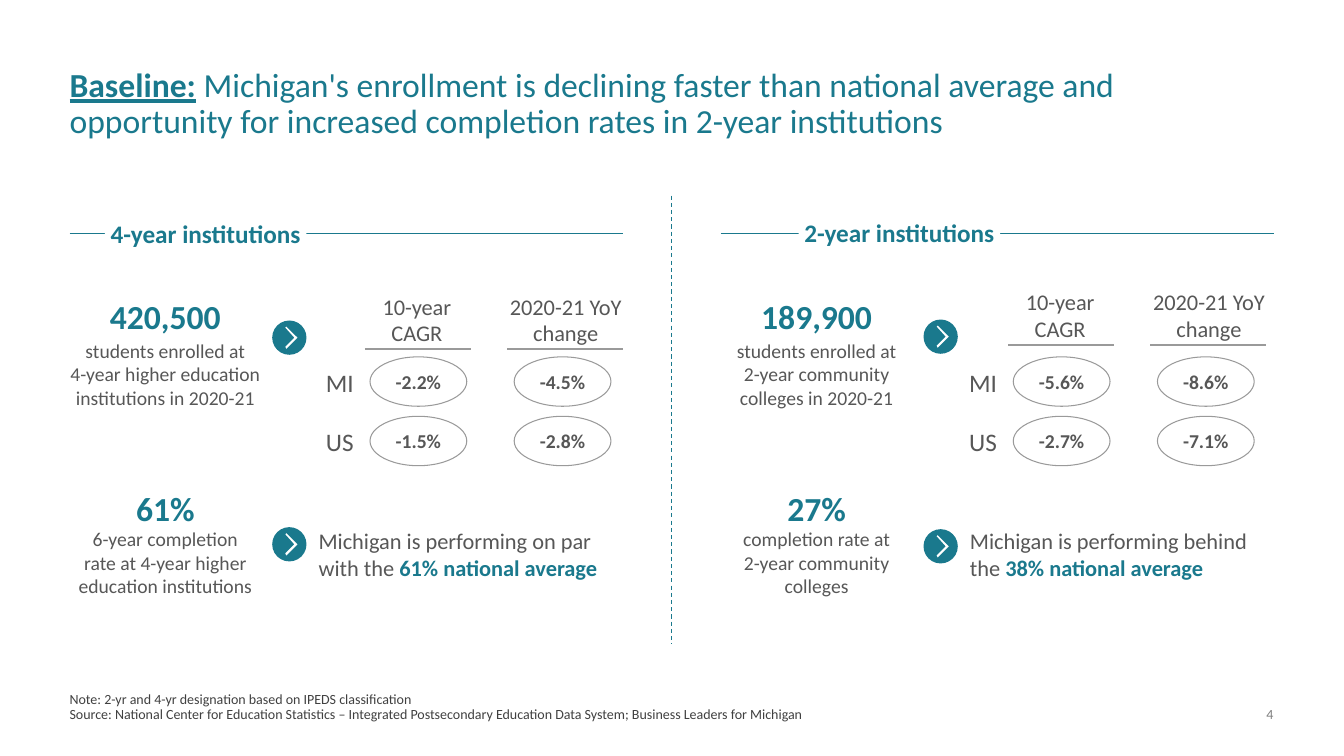
from dataclasses import dataclass

from lxml.etree import SubElement
from pptx import Presentation
from pptx.dml.color import RGBColor
from pptx.enum.dml import MSO_LINE
from pptx.enum.shapes import MSO_CONNECTOR, MSO_SHAPE
from pptx.enum.text import MSO_ANCHOR, MSO_AUTO_SIZE, PP_ALIGN
from pptx.oxml.ns import qn
from pptx.util import Inches, Pt

TEAL = RGBColor(0x1A, 0x79, 0x8D)
TEXT_GREY = RGBColor(0x57, 0x57, 0x57)
LINE_GREY = RGBColor(0x9A, 0x9A, 0x9A)
NOTE_GREY = RGBColor(0x40, 0x40, 0x40)
PAGE_GREY = RGBColor(0x80, 0x80, 0x80)
WHITE = RGBColor(0xFF, 0xFF, 0xFF)

FONT = "Calibri"
STAT_WIDTH = 1.9
ARROW_SIZE = 0.34
CHEVRON = [(0.14, 0.06), (0.25, 0.17), (0.14, 0.28),
           (0.13, 0.26), (0.22, 0.17), (0.13, 0.07)]
COLUMN_STEP = 1.43
ROW_STEP = 0.59


@dataclass
class Institutions:
    heading: str
    heading_offset: float
    heading_top: float
    enrolled: str
    enrolled_caption: str
    rates: dict
    rates_offset: float
    rates_top: float
    completion: str
    completion_caption: str
    verdict: str
    benchmark: str
    arrow_tops: tuple


FOUR_YEAR = Institutions(
    "4-year institutions", 0.35, 2.17,
    "420,500", "students enrolled at\n4-year higher education institutions in 2020-21",
    {"MI": ("-2.2%", "-4.5%"), "US": ("-1.5%", "-2.8%")}, 2.4, 2.9,
    "61%", "6-year completion\nrate at 4-year higher education institutions",
    "Michigan is performing on par with the ", "61% national average", (3.18, 5.23))
TWO_YEAR = Institutions(
    "2-year institutions", 0.77, 2.16,
    "189,900", "students enrolled at\n2-year community colleges in 2020-21",
    {"MI": ("-5.6%", "-8.6%"), "US": ("-2.7%", "-7.1%")}, 2.32, 2.86,
    "27%", "completion rate at\n2-year community colleges",
    "Michigan is performing behind the ", "38% national average", (3.17, 5.25))


def add_run(paragraph, text, size, color, bold=False, underline=False):
    run = paragraph.add_run()
    run.text = text
    font = run.font
    font.name, font.size, font.bold, font.underline = FONT, Pt(size), bold, underline
    font.color.rgb = color


def set_frame(frame, anchor, inset=0.0):
    frame.word_wrap = True
    frame.auto_size = MSO_AUTO_SIZE.NONE
    frame.vertical_anchor = anchor
    frame.margin_left = frame.margin_right = Inches(inset)
    frame.margin_top = frame.margin_bottom = Inches(inset / 2)


def write(frame, text, size, color, bold=False, align=PP_ALIGN.CENTER,
          anchor=MSO_ANCHOR.MIDDLE, inset=0.0):
    """Fill a frame with one paragraph, breaking the line at each newline."""
    set_frame(frame, anchor, inset)
    paragraph = frame.paragraphs[0]
    paragraph.alignment = align
    for number, line in enumerate(text.split("\n")):
        if number:
            paragraph.add_line_break()
        add_run(paragraph, line, size, color, bold)
    return paragraph


def add_text(slide, box, *args, **kwargs):
    textbox = slide.shapes.add_textbox(*map(Inches, box))
    return write(textbox.text_frame, *args, **kwargs)


def add_line(slide, start, end, color, width=0.75):
    line = slide.shapes.add_connector(
        MSO_CONNECTOR.STRAIGHT, *map(Inches, (*start, *end)))
    line.line.color.rgb = color
    line.line.width = Pt(width)
    SubElement(line._element.spPr, qn("a:effectLst"))
    return line


def add_filled(shapes, kind, box, color):
    shape = shapes.add_shape(kind, *map(Inches, box))
    shape.shadow.inherit = False
    shape.fill.solid()
    shape.fill.fore_color.rgb = color
    shape.line.fill.background()
    return shape


def add_arrow(slide, left, top):
    """Teal disc with a white chevron."""
    shapes = slide.shapes.add_group_shape().shapes
    add_filled(shapes, MSO_SHAPE.OVAL, (left, top, ARROW_SIZE, ARROW_SIZE), TEAL)
    points = [(Inches(left + x), Inches(top + y)) for x, y in CHEVRON]
    builder = shapes.build_freeform(*points[0])
    builder.add_line_segments(points[1:])
    chevron = builder.convert_to_shape()
    chevron.shadow.inherit = False
    chevron.fill.solid()
    chevron.fill.fore_color.rgb = WHITE
    chevron.line.fill.background()


def add_stat(slide, left, top, number, caption, caption_top):
    add_text(slide, (left, top, STAT_WIDTH, 0.5), number, 24, TEAL, bold=True)
    add_text(slide, (left, caption_top, STAT_WIDTH, 0.81), caption, 14, TEXT_GREY,
             anchor=MSO_ANCHOR.TOP)


def add_rate(slide, left, top, rate):
    oval = slide.shapes.add_shape(
        MSO_SHAPE.OVAL, *map(Inches, (left, top, 0.96, 0.49)))
    oval.shadow.inherit = False
    oval.fill.background()
    oval.line.color.rgb = LINE_GREY
    oval.line.width = Pt(0.75)
    write(oval.text_frame, rate, 14, TEXT_GREY, bold=True)


def add_rates(slide, left, top, rates):
    """Growth rates: headed columns, one row of ovals for each region."""
    columns = [("10-year CAGR", 0.47, 1.15, 0.53, 1.05),
               ("2020-21 YoY change", 1.93, 1.18, 1.94, 1.15)]
    for header, x, width, rule_x, rule_width in columns:
        add_text(slide, (left + x, top, width, 0.54), header, 16, TEXT_GREY)
        rule_left, rule_top = left + rule_x, top + 0.56
        add_line(slide, (rule_left, rule_top), (rule_left + rule_width, rule_top),
                 LINE_GREY, 1.5)
    for row, (region, values) in enumerate(rates.items()):
        row_top = 3.54 + row * ROW_STEP
        add_text(slide, (left, row_top + 0.04, 0.56, 0.42), region, 18, TEXT_GREY,
                 inset=0.1)
        for column, rate in enumerate(values):
            add_rate(slide, left + 0.58 + column * COLUMN_STEP, row_top, rate)


def add_institutions(slide, left, width, data):
    add_line(slide, (left, 2.32), (left + width, 2.32), TEAL)
    heading = add_filled(slide.shapes, MSO_SHAPE.RECTANGLE,
                         (left + data.heading_offset, data.heading_top, 2, 0.3), WHITE)
    write(heading.text_frame, data.heading, 18, TEAL, bold=True)
    add_stat(slide, left, 2.89, data.enrolled, data.enrolled_caption, 3.36)
    add_stat(slide, left, 4.79, data.completion, data.completion_caption, 5.23)
    for top in data.arrow_tops:
        add_arrow(slide, left + 2.01, top)
    add_rates(slide, left + data.rates_offset, data.rates_top, data.rates)
    verdict = add_text(slide, (left + 2.47, 5.23, 3.02, 0.81), data.verdict, 16,
                       TEXT_GREY, align=PP_ALIGN.LEFT, anchor=MSO_ANCHOR.TOP)
    add_run(verdict, data.benchmark, 16, TEAL, bold=True)


def add_title(slide, left, top, width, height):
    title = slide.shapes.title
    title.left, title.top, title.width, title.height = map(
        Inches, (left, top, width, height))
    set_frame(title.text_frame, MSO_ANCHOR.TOP)
    paragraph = title.text_frame.paragraphs[0]
    paragraph.alignment = PP_ALIGN.LEFT
    paragraph.line_spacing = 0.9
    add_run(paragraph, "Baseline:", 24, TEAL, bold=True, underline=True)
    add_run(paragraph, " Michigan's enrollment is declining faster than national average "
            "and opportunity for increased completion rates in 2-year institutions", 24, TEAL)


def add_footer(slide, left, top, width):
    note = slide.shapes.add_textbox(*map(Inches, (left, top, width, 0.3))).text_frame
    set_frame(note, MSO_ANCHOR.BOTTOM)
    lines = ["Note: 2-yr and 4-yr designation based on IPEDS classification",
             "Source: National Center for Education Statistics – Integrated Postsecondary "
             "Education Data System; Business Leaders for Michigan"]
    for paragraph, line in zip((note.paragraphs[0], note.add_paragraph()), lines):
        paragraph.line_spacing = 0.9
        add_run(paragraph, line, 10, NOTE_GREY)
    add_text(slide, (12.21, top + 0.13, 0.42, 0.17), "4", 10, PAGE_GREY,
             align=PP_ALIGN.RIGHT, anchor=MSO_ANCHOR.BOTTOM)


def main():
    deck = Presentation()
    deck.slide_width, deck.slide_height = Inches(13.33), Inches(7.5)
    slide = deck.slides.add_slide(deck.slide_layouts[5])
    add_title(slide, 0.69, 0.68, 11.96, 0.73)
    add_institutions(slide, 0.69, 5.49, FOUR_YEAR)
    add_institutions(slide, 7.15, 5.49, TWO_YEAR)
    divider = add_line(slide, (6.66, 1.94), (6.66, 6.39), TEAL)
    divider.line.dash_style = MSO_LINE.DASH
    add_footer(slide, 0.69, 6.87, 9.88)
    deck.save("out.pptx")


if __name__ == "__main__":
    main()
